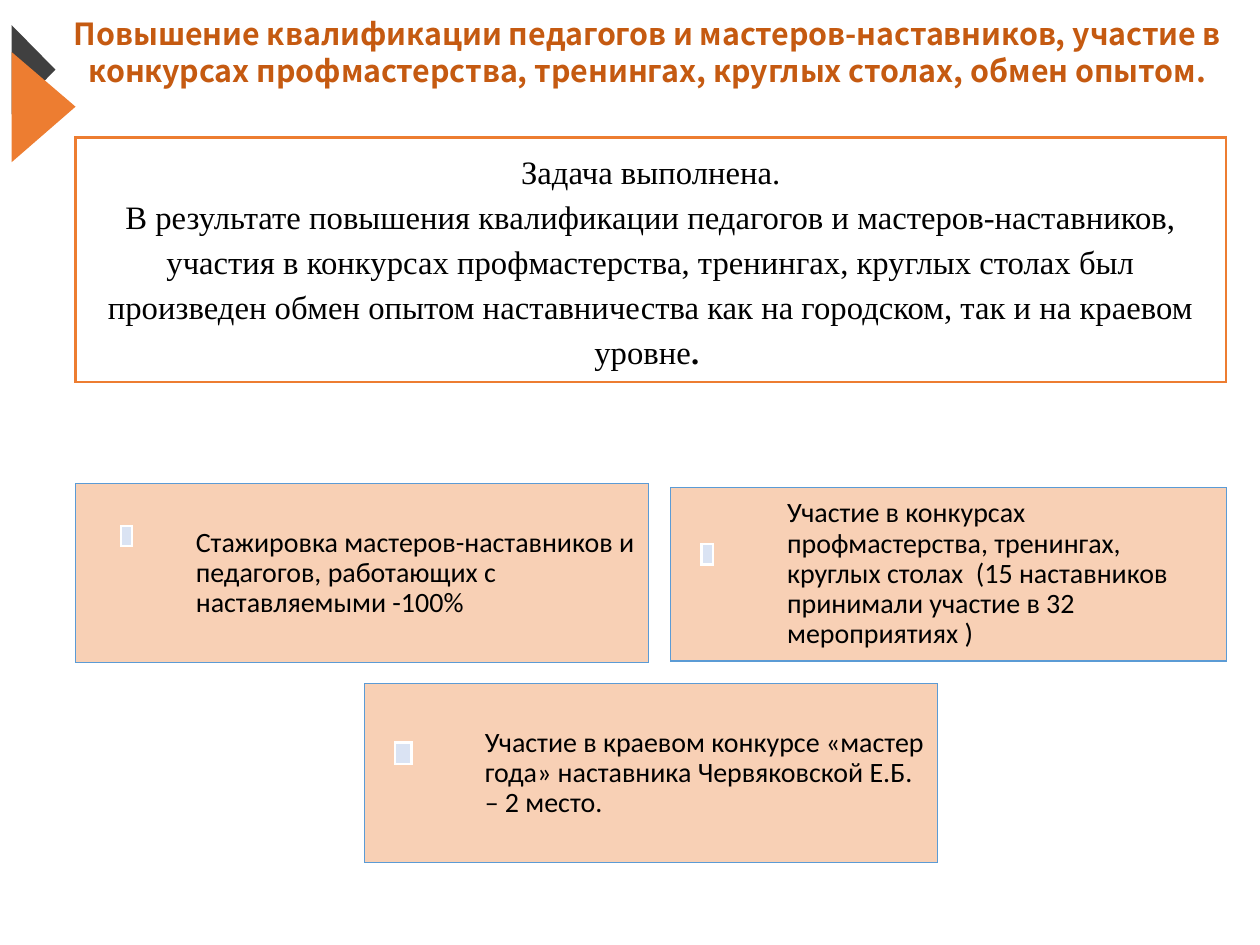
from dataclasses import dataclass
from lxml import etree
from pptx import Presentation
from pptx.dml.color import RGBColor
from pptx.enum.shapes import MSO_SHAPE
from pptx.enum.text import MSO_ANCHOR, MSO_AUTO_SIZE, PP_ALIGN
from pptx.oxml.ns import qn
from pptx.util import Inches, Pt

RECT = MSO_SHAPE.RECTANGLE
TOP, MIDDLE = MSO_ANCHOR.TOP, MSO_ANCHOR.MIDDLE
LEFT, CENTER = PP_ALIGN.LEFT, PP_ALIGN.CENTER
FIXED = MSO_AUTO_SIZE.NONE
TITLE_ONLY = 5
COLS, ROWS = 100, 75
UNIT = 7.5 / COLS


@dataclass(frozen=True)
class Theme:
    """Colours and type styles of the slide."""
    dark: str = "404040"
    orange: str = "ED7D31"
    white: str = "FFFFFF"
    peach: str = "F8CBAD"
    blue: str = "5B9BD5"
    pale: str = "DAE3F3"
    head: tuple = ("Noto Sans CJK SC", 13, "C55A11", True)
    body: tuple = ("Times New Roman", 14, "000000", False)
    card: tuple = ("Calibri", 12, "000000", False)


THEME = Theme()

TITLE = ("Повышение квалификации педагогов и мастеров-наставников, участие в "
         "конкурсах профмастерства, тренингах, круглых столах, обмен опытом.")
RESULT = ("Задача выполнена.",
          "В результате повышения квалификации педагогов и мастеров-наставников, "
          "участия в конкурсах профмастерства, тренингах, круглых столах был "
          "произведен обмен опытом наставничества как на городском, так и на "
          "краевом уровне")
CARDS = (
    ("Стажировка мастеров-наставников и педагогов, работающих с "
     "наставляемыми -100%",
     (6, 38.4, 45.47, 14.2), (9.6, 41.73, 0.87, 1.6)),
    ("Участие в конкурсах профмастерства, тренингах, круглых столах  "
     "(15 наставников принимали участие в 32 мероприятиях )",
     (53.2, 38.67, 44.13, 13.8), (55.67, 43.2, 0.93, 1.6)),
    ("Участие в краевом конкурсе «мастер года» наставника Червяковской Е.Б. "
     "– 2 место.",
     (28.93, 54.27, 45.47, 14.2), (31.33, 58.93, 1.33, 1.73)),
)
ARROWS = (
    (THEME.dark, ((0.93, 2), (4.4, 5.53), (0.93, 9.07))),
    (THEME.orange, ((0.93, 4.13), (6, 8.47), (0.93, 12.87))),
)


def grid(*cells):
    """Turn grid units into lengths."""
    return [Inches(cell * UNIT) for cell in cells]


def apply(item, **values):
    """Set attributes from a dict of values."""
    for name, value in values.items():
        setattr(item, name, value)


def paint(shape, fill, line=None, width=1):
    """Give a shape its fill and sharp outline without a shadow."""
    shape.shadow.inherit = False
    shape.fill.solid()
    shape.fill.fore_color.rgb = RGBColor.from_string(fill)
    if line:
        shape.line.color.rgb = RGBColor.from_string(line)
        shape.line.width = Pt(width)
        edge = shape.line.fill._xPr
        etree.SubElement(edge, qn("a:miter")).set("lim", "800000")
    else:
        shape.line.fill.background()


def fade(shape, share):
    """Set the opacity of a solid fill."""
    tone = shape.fill._xPr.find(qn("a:solidFill"))[0]
    etree.SubElement(tone, qn("a:alpha")).set("val", str(share * 1000))


def frame(shape, anchor, pads):
    """Set wrapping, anchor and insets in grid units."""
    left, top, right, bottom = grid(*pads)
    apply(shape.text_frame, word_wrap=True, auto_size=FIXED,
          vertical_anchor=anchor, margin_left=left, margin_top=top,
          margin_right=right, margin_bottom=bottom)
    return shape.text_frame


def write(para, text, style, align, space):
    """Add a styled run to a paragraph."""
    apply(para, alignment=align, line_spacing=space)
    run = para.add_run()
    run.text = text
    name, size, tint, bold = style
    apply(run.font, name=name, size=Pt(size), bold=bold)
    run.font.color.rgb = RGBColor.from_string(tint)
    return run


def box(slide, place, fill, line, width=1):
    """Draw a painted rectangle."""
    shape = slide.shapes.add_shape(RECT, *grid(*place))
    paint(shape, fill, line, width)
    return shape


def arrow(slide, fill, points):
    """Draw a triangle through three grid points."""
    start, *rest = [tuple(grid(*point)) for point in points]
    pen = slide.shapes.build_freeform(*start)
    pen.add_line_segments(rest, close=True)
    paint(pen.convert_to_shape(), fill)


def head(slide):
    """Place and fill the title."""
    title = slide.shapes.title
    left, top, width, height = grid(2.67, 1.2, 97.33, 5.87)
    apply(title, left=left, top=top, width=width, height=height)
    text = frame(title, TOP, (0, 0, 0, 0))
    write(text.paragraphs[0], TITLE, THEME.head, CENTER, Pt(15.8))


def result(slide):
    """Draw the framed summary."""
    shape = box(slide, (6, 10.93, 91.33, 19.4), THEME.white, THEME.orange)
    text = frame(shape, TOP, (1.33, 0.67, 1.33, 0.67))
    first, second = text.paragraphs[0], text.add_paragraph()
    for para, words in zip((first, second), RESULT):
        write(para, words, THEME.body, CENTER, 1.15)
    write(second, ". ", THEME.body, CENTER, 1.15).font.bold = True


def card(slide, words, place, mark):
    """Draw a card with its small marker."""
    shape = box(slide, place, THEME.peach, THEME.blue, 0.5)
    fade(shape, 90)
    text = frame(shape, MIDDLE, (place[2] * 0.21, 0.67, 0.67, 0.67))
    write(text.paragraphs[0], words, THEME.card, LEFT, 0.9)
    box(slide, mark, THEME.pale, THEME.white)


def main():
    """Build and save the slide."""
    deck = Presentation()
    deck.slide_width, deck.slide_height = grid(COLS, ROWS)
    slide = deck.slides.add_slide(deck.slide_layouts[TITLE_ONLY])
    for fill, points in ARROWS:
        arrow(slide, fill, points)
    head(slide)
    for item in CARDS:
        card(slide, *item)
    result(slide)
    deck.save("out.pptx")


if __name__ == "__main__":
    main()
